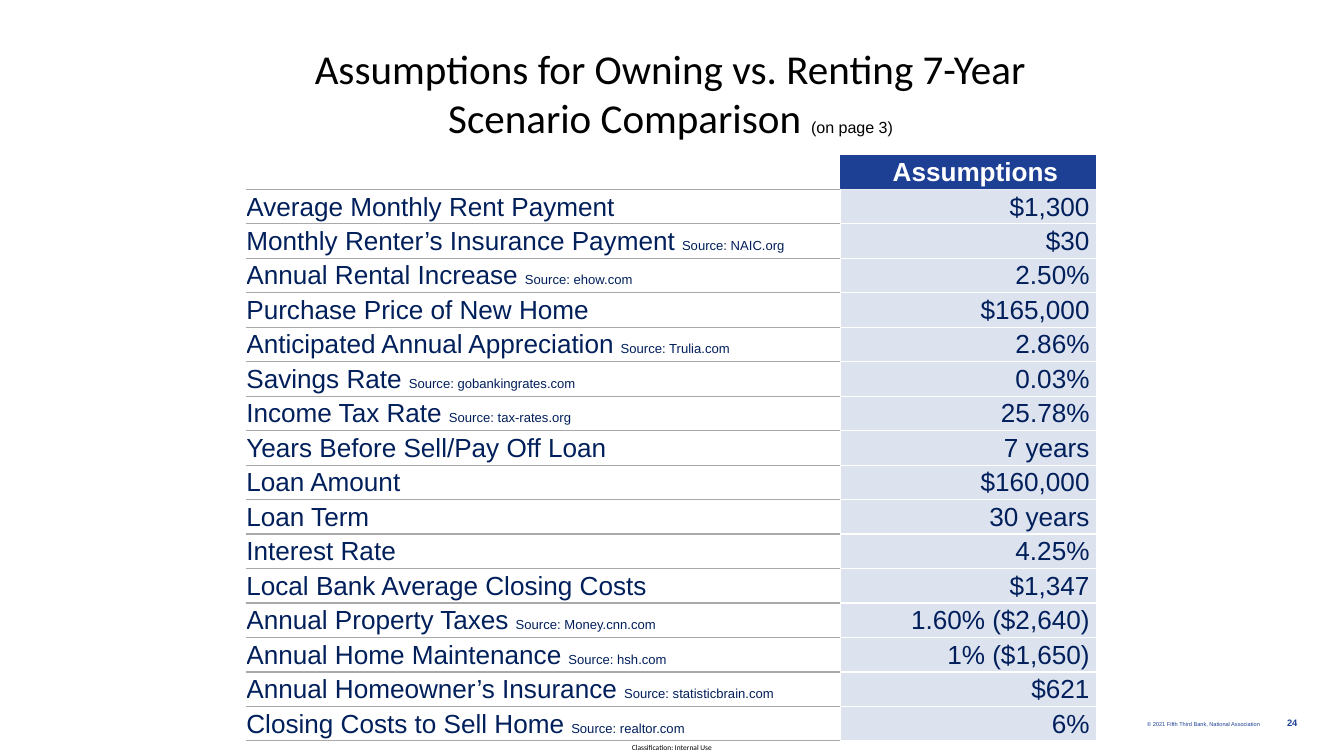
from lxml import etree
from pptx import Presentation
from pptx.dml.color import RGBColor
from pptx.enum.text import MSO_ANCHOR, PP_ALIGN
from pptx.oxml.ns import qn
from pptx.util import Pt

LEFT, CENTER, RIGHT = PP_ALIGN.LEFT, PP_ALIGN.CENTER, PP_ALIGN.RIGHT
TOP, MIDDLE = MSO_ANCHOR.TOP, MSO_ANCHOR.MIDDLE

COLORS = {
    "black": "000000",
    "white": "FFFFFF",
    "blue": "1D4094",
    "navy": "001F5B",
    "rule": "A9A9A9",
}

# Label, source, value
ASSUMPTIONS = [
    ("Average Monthly Rent Payment", "", "$1,300"),
    ("Monthly Renter’s Insurance Payment", "NAIC.org", "$30"),
    ("Annual Rental Increase", "ehow.com", "2.50%"),
    ("Purchase Price of New Home", "", "$165,000"),
    ("Anticipated Annual Appreciation", "Trulia.com", "2.86%"),
    ("Savings Rate", "gobankingrates.com", "0.03%"),
    ("Income Tax Rate", "tax-rates.org", "25.78%"),
    ("Years Before Sell/Pay Off Loan", "", "7 years"),
    ("Loan Amount", "", "$160,000"),
    ("Loan Term", "", "30 years"),
    ("Interest Rate", "", "4.25%"),
    ("Local Bank Average Closing Costs", "", "$1,347"),
    ("Annual Property Taxes", "Money.cnn.com", "1.60% ($2,640)"),
    ("Annual Home Maintenance", "hsh.com", "1% ($1,650)"),
    ("Annual Homeowner’s Insurance", "statisticbrain.com", "$621"),
    ("Closing Costs to Sell Home", "realtor.com", "6%"),
]


class SlideBuilder:
    table_size = 28
    source_size = 14
    row_height = 35.5
    border_width = 1.5
    tint_percent = 15

    def __init__(self, slide):
        self.slide = slide

    def style_run(self, run, size, color, font="Arial", bold=False):
        run.font.size = Pt(size)
        run.font.name = font
        run.font.bold = bold
        run.font.color.rgb = RGBColor.from_string(COLORS[color])

    def set_margins(self, frame, left=0, top=0, right=0):
        frame.margin_left, frame.margin_top = Pt(left), Pt(top)
        frame.margin_right, frame.margin_bottom = Pt(right), Pt(0)

    def text(self, box, content, size, color, font="Arial", align=CENTER, bold=False):
        shape = self.slide.shapes.add_textbox(*(Pt(length) for length in box))
        frame = shape.text_frame
        frame.word_wrap = True
        frame.vertical_anchor = MIDDLE
        self.set_margins(frame)
        frame.text = content
        paragraph = frame.paragraphs[0]
        paragraph.alignment = align
        self.style_run(paragraph.runs[0], size, color, font, bold)
        return paragraph

    def table(self, left, top, widths, row_count):
        shape = self.slide.shapes.add_table(
            row_count, len(widths), Pt(left), Pt(top),
            Pt(sum(widths)), Pt(row_count * self.row_height))
        table = shape.table
        table.first_row = table.horz_banding = False
        for column, width in zip(table.columns, widths):
            column.width = Pt(width)
        for row in table.rows:
            row.height = Pt(self.row_height)
        return table

    def cell(self, cell, content, color="navy", align=LEFT, left=0, right=0, bold=False):
        self.set_margins(cell, left, 3.3, right)
        cell.vertical_anchor = TOP
        cell.fill.background()
        cell.text_frame.text = content
        paragraph = cell.text_frame.paragraphs[0]
        paragraph.alignment = align
        paragraph.font.size = Pt(self.table_size)
        for run in paragraph.runs:
            self.style_run(run, self.table_size, color, bold=bold)
        return paragraph

    def fill(self, cell, color, percent=100):
        cell.fill.solid()
        cell.fill.fore_color.rgb = RGBColor.from_string(COLORS[color])
        if percent < 100:
            color_element = cell._tc.tcPr.find(".//" + qn("a:srgbClr"))
            etree.SubElement(color_element, qn("a:alpha"), val=str(percent * 1000))

    def borders(self, cell, **sides):
        properties = cell._tc.get_or_add_tcPr()
        for position, side in enumerate("LRTB"):
            line = etree.Element(qn("a:ln" + side), w=str(Pt(self.border_width)))
            color = sides.get(side)
            if color:
                solid = etree.SubElement(line, qn("a:solidFill"))
                etree.SubElement(solid, qn("a:srgbClr"), val=COLORS[color])
            else:
                etree.SubElement(line, qn("a:noFill"))
            properties.insert(position, line)


def main():
    presentation = Presentation()
    presentation.slide_width, presentation.slide_height = Pt(1440), Pt(810)
    slide = presentation.slides.add_slide(presentation.slide_layouts[6])
    builder = SlideBuilder(slide)

    # Title with a small page reference
    title = builder.text((263, 45, 911, 108),
                         "Assumptions for Owning vs. Renting 7-Year Scenario Comparison ",
                         44, "black", "Calibri")
    reference = title.add_run()
    reference.text = "(on page 3)"
    builder.style_run(reference, 17.2, "black")

    # Table header
    table = builder.table(264, 165.9, (636.5, 274.3), len(ASSUMPTIONS) + 1)
    corner, header = table.cell(0, 0), table.cell(0, 1)
    builder.cell(corner, "")
    builder.borders(corner, L="white", T="white", B="rule")
    builder.cell(header, "Assumptions", "white", left=56, bold=True)
    builder.fill(header, "blue")
    builder.borders(header)

    # Table rows
    for row, (label, source, value) in enumerate(ASSUMPTIONS, start=1):
        label_cell, value_cell = table.cell(row, 0), table.cell(row, 1)
        paragraph = builder.cell(label_cell, label + " " if source else label)
        if source:
            run = paragraph.add_run()
            run.text = "Source: " + source
            builder.style_run(run, builder.source_size, "navy")
        builder.borders(label_cell, L="white", R="white", T="rule", B="rule")

        builder.cell(value_cell, value, align=RIGHT, right=7.5)
        builder.fill(value_cell, "blue", builder.tint_percent)
        builder.borders(value_cell, L="white", R="white", B="white",
                        T="white" if row > 1 else None)

    # Footer
    builder.text((667, 792, 106, 18), "Classification: Internal Use", 8, "black", "Calibri")
    builder.text((1224, 771, 131, 9), "© 2021 Fifth Third Bank, National Association", 6, "blue")
    builder.text((1372, 767.5, 18, 13), "24", 10, "blue", align=RIGHT, bold=True)

    presentation.save("out.pptx")


if __name__ == "__main__":
    main()
